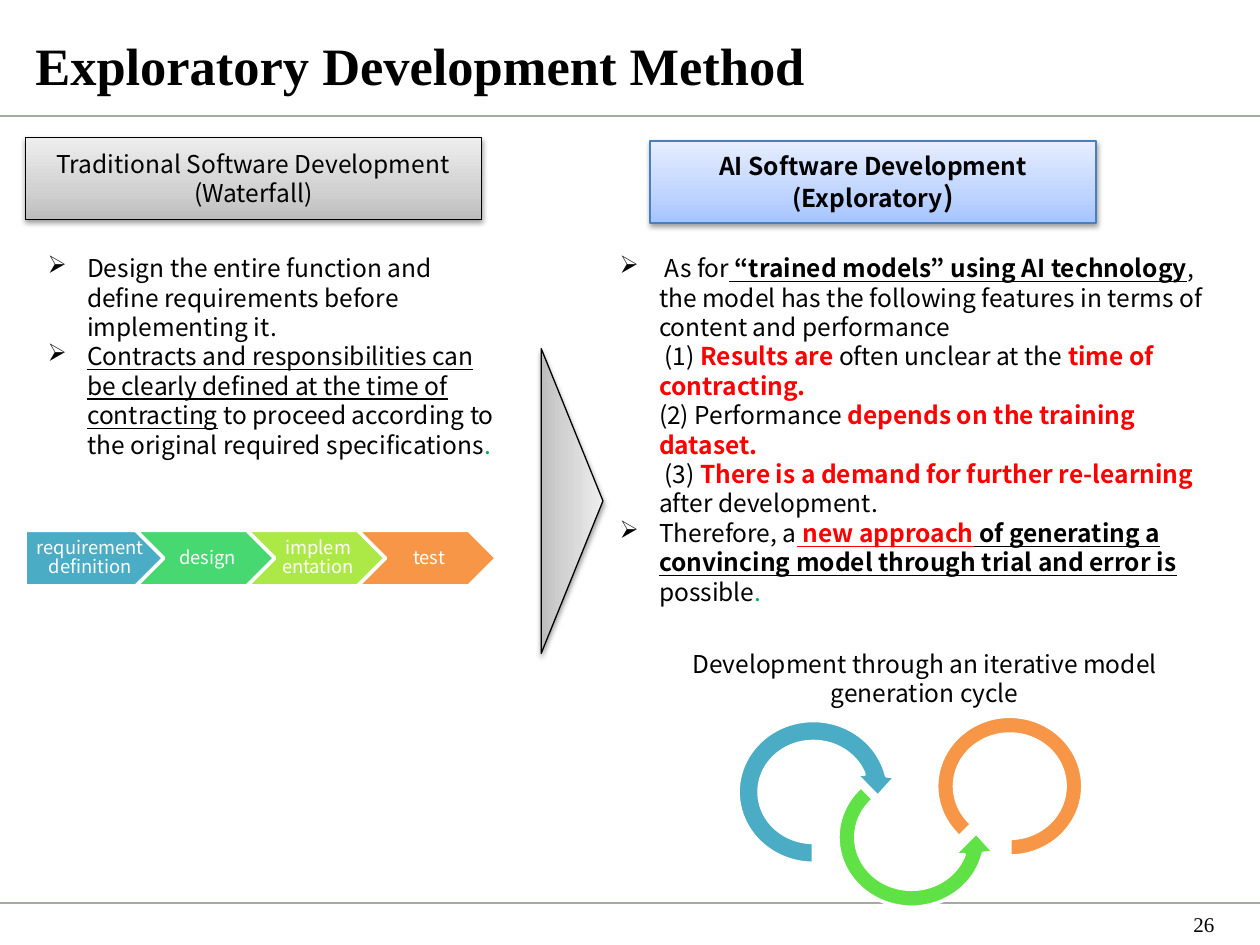
from lxml import etree
from pptx import Presentation
from pptx.dml.color import RGBColor
from pptx.enum.shapes import MSO_CONNECTOR, MSO_SHAPE
from pptx.enum.text import MSO_ANCHOR, MSO_AUTO_SIZE, PP_ALIGN
from pptx.oxml.ns import qn
from pptx.util import Pt

LEFT, CENTER, RIGHT = PP_ALIGN.LEFT, PP_ALIGN.CENTER, PP_ALIGN.RIGHT
MIDDLE, TOP, BOTTOM = MSO_ANCHOR.MIDDLE, MSO_ANCHOR.TOP, MSO_ANCHOR.BOTTOM
GROW = MSO_AUTO_SIZE.SHAPE_TO_FIT_TEXT
RECTANGLE, TRIANGLE = MSO_SHAPE.RECTANGLE, MSO_SHAPE.ISOSCELES_TRIANGLE
PENTAGON, CHEVRON = MSO_SHAPE.PENTAGON, MSO_SHAPE.CHEVRON
STRAIGHT = MSO_CONNECTOR.STRAIGHT

SANS, SERIF = "Noto Sans CJK JP", "Times New Roman"
BLACK, WHITE, RED, GREEN = "000000", "FFFFFF", "FF0000", "00B050"
GREYS = ["BDBDBD", "D1D1D1", "EEEEEE"]
BLUES = ["A4C4FF", "BFD4FF", "E6EEFF"]
BOLD, PLAIN = {"bold": True}, {}
UNDERLINED = {"underline": True}
STRONG = {"bold": True, "underline": True}
ALERT = {"bold": True, "color": RED}
FULL_STOP = (".", {"color": GREEN})

STEPS = [
    ("requirement definition", "4BACC6"),
    ("design", "47D872"),
    ("implementation", "ACE946"),
    ("test", "F79646"),
]
WATERFALL_POINTS = [
    [("Design the entire function and define requirements before implementing it.", PLAIN)],
    [
        ("Contracts and responsibilities can be clearly defined at the time of contracting", UNDERLINED),
        (" to proceed according to the original required specifications", PLAIN),
        FULL_STOP,
    ],
]
EXPLORATORY_POINTS = [
    [
        (" As for", PLAIN),
        (" “trained models” using AI technology", STRONG),
        (", the model has the following features in terms of content and performance\n (1)", PLAIN),
        (" Results are", ALERT),
        (" often unclear at the", PLAIN),
        (" time of contracting.\n", ALERT),
        ("(2) Performance", PLAIN),
        (" depends on the training dataset.\n", ALERT),
        (" (3)", PLAIN),
        (" There is a demand for further re-learning", ALERT),
        (" after development.", PLAIN),
    ],
    [
        ("Therefore, a", PLAIN),
        (" new approach", {**STRONG, "color": RED}),
        (" of generating a convincing model through trial and error is", STRONG),
        (" possible", PLAIN),
        FULL_STOP,
    ],
]
CYCLE_ARCS = [
    (MSO_SHAPE.CIRCULAR_ARROW, (0, 0, 92.9, 97.2), [0.129, 11.423, 44.943, 108, 0.125], "4BACC6"),
    (MSO_SHAPE.LEFT_CIRCULAR_ARROW, (56.2, 25.9, 92.9, 97.2), [0.11, 11.423, 63, 189, 0.125], "60E146"),
    (MSO_SHAPE.BLOCK_ARC, (118.8, 3.6, 79.9, 83.5), [135, 108, 0.127], "F79646"),
]


def rgb(value):
    return RGBColor.from_string(value)


def points(box):
    return [Pt(length) for length in box]


def write(paragraph, text, size=14, font=SANS, color=BLACK, bold=False, underline=False):
    for index, line in enumerate(text.split("\n")):
        if index:
            paragraph.add_line_break()
        if line:
            run = paragraph.add_run()
            run.text = line
            run.font.size = Pt(size)
            run.font.name = font
            run.font.color.rgb = rgb(color)
            run.font.bold = bold
            run.font.underline = underline


def fill_frame(frame, paragraphs, align=LEFT, anchor=TOP, insets=(7.2, 3.6, 7.2, 3.6),
               bullet=None, spacing=None, **style):
    frame.word_wrap = True
    frame.vertical_anchor = anchor
    frame.margin_left, frame.margin_top, frame.margin_right, frame.margin_bottom = points(insets)
    for index, runs in enumerate(paragraphs):
        paragraph = frame.paragraphs[0] if index == 0 else frame.add_paragraph()
        paragraph.alignment = align
        if spacing:
            paragraph.line_spacing = spacing
        if bullet:
            properties = paragraph._p.get_or_add_pPr()
            properties.set("marL", str(Pt(22.5)))
            properties.set("indent", str(-Pt(22.5)))
            etree.SubElement(properties, qn("a:buChar"), char=bullet)
        for text, run_style in runs:
            write(paragraph, text, **{**style, **run_style})


def text_box(slide, box, paragraphs, grow=False, **style):
    frame = slide.shapes.add_textbox(*points(box)).text_frame
    fill_frame(frame, paragraphs, **style)
    if grow:
        frame.auto_size = GROW


def flat_shape(slide, kind, box, color, line=WHITE, width=2):
    shape = slide.shapes.add_shape(kind, *points(box))
    shape.fill.solid()
    shape.fill.fore_color.rgb = rgb(color)
    shape.line.color.rgb = rgb(line)
    shape.line.width = Pt(width)
    shape.shadow.inherit = False
    return shape


def raised_shape(slide, kind, box, colors, line):
    shape = flat_shape(slide, kind, box, colors[0], line, 0.75)
    properties = shape._element.spPr
    gradient = etree.Element(qn("a:gradFill"), rotWithShape="1")
    stops = etree.SubElement(gradient, qn("a:gsLst"))
    for position, color in zip((0, 35000, 100000), colors):
        stop = etree.SubElement(stops, qn("a:gs"), pos=str(position))
        etree.SubElement(stop, qn("a:srgbClr"), val=color)
    etree.SubElement(gradient, qn("a:lin"), ang="16200000", scaled="0")
    properties.replace(properties.find(qn("a:solidFill")), gradient)
    shadow = etree.SubElement(properties.find(qn("a:effectLst")), qn("a:outerShdw"),
                              blurRad=str(Pt(3.1)), dist=str(Pt(1.6)), dir="5400000", rotWithShape="0")
    shade = etree.SubElement(shadow, qn("a:srgbClr"), val=BLACK)
    etree.SubElement(shade, qn("a:alpha"), val="38000")
    return shape


def rule(slide, y):
    line = slide.shapes.add_connector(STRAIGHT, *points((0, y, 720, y)))
    line.line.color.rgb = rgb("9FADA0")
    line.line.width = Pt(1)
    etree.SubElement(line._element.spPr, qn("a:effectLst"))


def page_frame(slide, title, number):
    rule(slide, 516.2)
    rule(slide, 66.2)
    bare = {"insets": (0, 0, 0, 0), "font": SERIF}
    text_box(slide, (660.2, 520.6, 33.8, 15.1), [[(number, PLAIN)]],
             align=RIGHT, anchor=MIDDLE, size=12, **bare)
    text_box(slide, (20.2, 13.7, 544.3, 41), [[(title, BOLD)]], anchor=BOTTOM, size=30, **bare)


def heading(slide, box, paragraphs, colors, line, **style):
    banner = raised_shape(slide, RECTANGLE, box, colors, line)
    fill_frame(banner.text_frame, paragraphs, align=CENTER, anchor=MIDDLE, **style)


def process_chain(slide, box):
    left, top, width, height = box
    step_width = width / (1 + 0.8 * (len(STEPS) - 1))
    for index, (label, color) in enumerate(STEPS):
        x = left + index * 0.8 * step_width
        flat_shape(slide, CHEVRON if index else PENTAGON, (x, top, step_width, height), color)
        label_box = (x + 0.2 * step_width, 0.6 * step_width) if index else (x, 0.9 * step_width)
        text_box(slide, (label_box[0], top, label_box[1], height), [[(label, PLAIN)]],
                 align=CENTER, anchor=MIDDLE, insets=(3.6 if index else 4.3, 2.2, 1.4, 2.2),
                 spacing=0.9, size=10.5, color=WHITE)


def iteration_cycle(slide, left, top):
    for kind, (x, y, width, height), adjustments, color in CYCLE_ARCS:
        arc = flat_shape(slide, kind, (left + x, top + y, width, height), color)
        arc.rotation = 270
        for index, value in enumerate(adjustments):
            arc.adjustments[index] = value


def transition(slide, box):
    raised_shape(slide, TRIANGLE, box, GREYS, BLACK).rotation = 90


def main():
    deck = Presentation()
    deck.slide_width, deck.slide_height = Pt(720), Pt(540)
    slide = deck.slides.add_slide(deck.slide_layouts[6])
    page_frame(slide, "Exploratory Development Method", "26")
    heading(slide, (14.4, 78.5, 260.6, 46.8),
            [[("Traditional Software Development", PLAIN)], [("(Waterfall)", PLAIN)]], GREYS, BLACK)
    process_chain(slide, (14.4, 303.1, 269.3, 31.7))
    text_box(slide, (20.2, 141.1, 269.3, 143.3), WATERFALL_POINTS, grow=True, bullet="➢")
    heading(slide, (371.5, 80.6, 254.9, 46.8),
            [[("AI Software Development", PLAIN)], [("(Exploratory", PLAIN), (")", {"size": 16})]],
            BLUES, "4B7EBC", bold=True)
    text_box(slide, (347, 141.1, 363.6, 211), EXPLORATORY_POINTS, grow=True, bullet="➢")
    iteration_cycle(slide, 418.3, 403.9)
    transition(slide, (239.8, 268.6, 174.2, 35.3))
    text_box(slide, (385.9, 367.2, 285.1, 41),
             [[("Development through an iterative model generation cycle", PLAIN)]],
             grow=True, align=CENTER, anchor=MIDDLE)
    deck.save("out.pptx")


if __name__ == "__main__":
    main()
